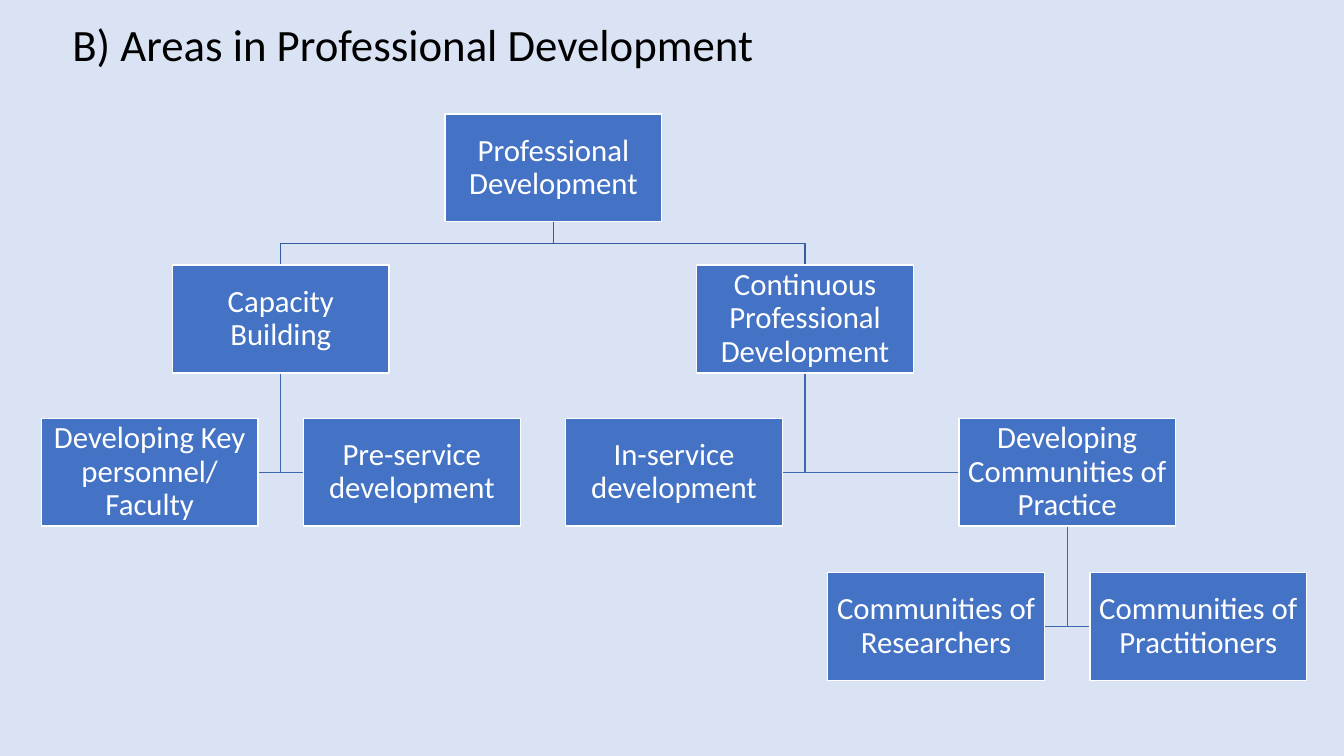
"""Build the organisation chart of areas in professional development."""
from pptx import Presentation
from pptx import util as u
from pptx.dml.color import RGBColor
from pptx.enum import shapes, text

BACKGROUND = RGBColor(0xDA, 0xE3, 0xF3)
BLUE = RGBColor(0x44, 0x72, 0xC4)
UPPER_LINE = RGBColor(0x36, 0x5B, 0x9D)
LOWER_LINE = RGBColor(0x3E, 0x67, 0xB2)
WHITE = RGBColor(0xFF, 0xFF, 0xFF)
BLACK = RGBColor(0, 0, 0)

LEFT, COLUMN_STEP = 0.41, 1.3
ROW_TOPS = [1.13, 2.63, 4.15, 5.68]
BOX_WIDTH, BOX_HEIGHT = 2.15, 1.07

AREAS = {
    "Professional Development": (3.08, 0, None),
    "Capacity Building": (1, 1, "Professional Development"),
    "Developing Key personnel/ Faculty": (0, 2, "Capacity Building"),
    "Pre-service development": (2, 2, "Capacity Building"),
    "Continuous Professional Development": (5, 1, "Professional Development"),
    "In-service development": (4, 2, "Continuous Professional Development"),
    "Developing Communities of Practice": (7, 2, "Continuous Professional Development"),
    "Communities of Researchers": (6, 3, "Developing Communities of Practice"),
    "Communities of Practitioners": (8, 3, "Developing Communities of Practice"),
}


def write(shape, words, size, color, align, inset):
    """Put one formatted paragraph into a shape."""
    frame = shape.text_frame
    frame_format = {"word_wrap": True, "vertical_anchor": text.MSO_ANCHOR.MIDDLE}
    for side, margin in inset.items():
        frame_format["margin_" + side] = u.Inches(margin)
    for name, value in frame_format.items():
        setattr(frame, name, value)
    para = frame.paragraphs[0]
    for name, value in {"alignment": align, "line_spacing": 0.9}.items():
        setattr(para, name, value)
    span = para.add_run()
    span.text = words
    for name, value in {"name": "Calibri", "size": u.Pt(size)}.items():
        setattr(span.font, name, value)
    span.font.color.rgb = color


def place(column, row):
    """Give the left and top of a box in inches."""
    return LEFT + column * COLUMN_STEP, ROW_TOPS[row]


deck = Presentation()
deck.slide_width, deck.slide_height = u.Inches(13.33), u.Inches(7.5)
page = deck.slides.add_slide(deck.slide_layouts[6])
page.background.fill.solid()
page.background.fill.fore_color.rgb = BACKGROUND

title = page.shapes.add_textbox(u.Inches(0.62), 0, u.Inches(11.5), u.Inches(0.93))
write(title, "B) Areas in Professional Development", 32, BLACK,
      text.PP_ALIGN.LEFT, {"left": 0.1, "right": 0.1})

for column, row, parent in AREAS.values():
    if parent is None:
        continue
    left, top = place(column, row)
    parent_left, parent_top = place(*AREAS[parent][:2])
    start_x, start_y = parent_left + BOX_WIDTH / 2, parent_top + BOX_HEIGHT
    if row == 1:
        end_x, middle_y = left + BOX_WIDTH / 2, (start_y + top) / 2
        bends = [(start_x, middle_y), (end_x, middle_y), (end_x, top)]
        color = UPPER_LINE
    else:
        end_x = left if left > parent_left else left + BOX_WIDTH
        middle_y = top + BOX_HEIGHT / 2
        bends = [(start_x, middle_y), (end_x, middle_y)]
        color = LOWER_LINE
    builder = page.shapes.build_freeform(u.Inches(start_x), u.Inches(start_y))
    builder.add_line_segments([(u.Inches(x), u.Inches(y)) for x, y in bends], close=False)
    branch = builder.convert_to_shape()
    branch.shadow.inherit = False
    branch.fill.background()
    branch.line.color.rgb = color
    branch.line.width = u.Pt(1)

for label, (column, row, parent) in AREAS.items():
    left, top = place(column, row)
    box = page.shapes.add_shape(shapes.MSO_SHAPE.RECTANGLE, u.Inches(left), u.Inches(top),
                                u.Inches(BOX_WIDTH), u.Inches(BOX_HEIGHT))
    box.shadow.inherit = False
    box.fill.solid()
    box.fill.fore_color.rgb = BLUE
    box.line.color.rgb = WHITE
    box.line.width = u.Pt(1)
    write(box, label, 22, WHITE, text.PP_ALIGN.CENTER,
          dict.fromkeys(["left", "top", "right", "bottom"], 0.02))

deck.save("out.pptx")
